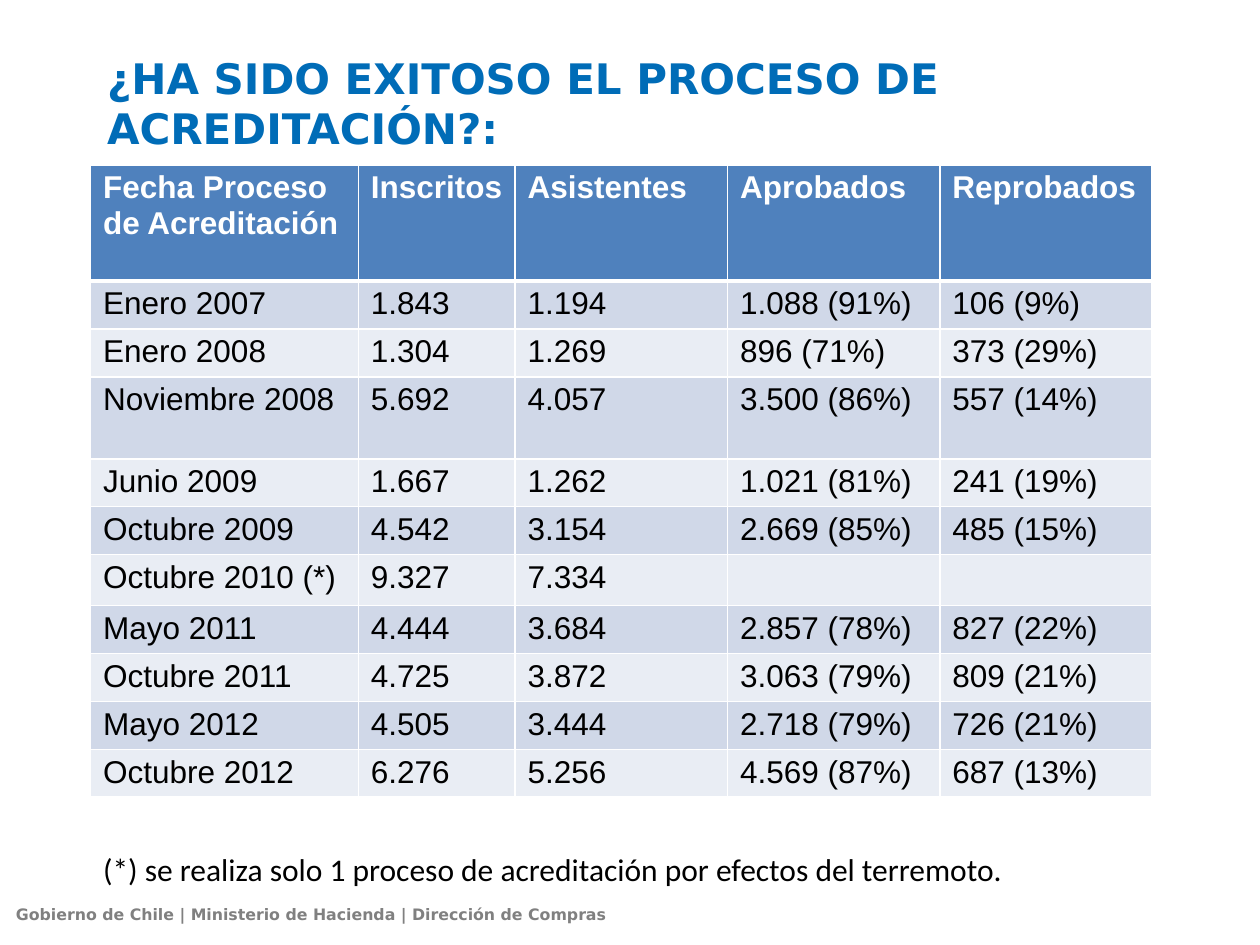
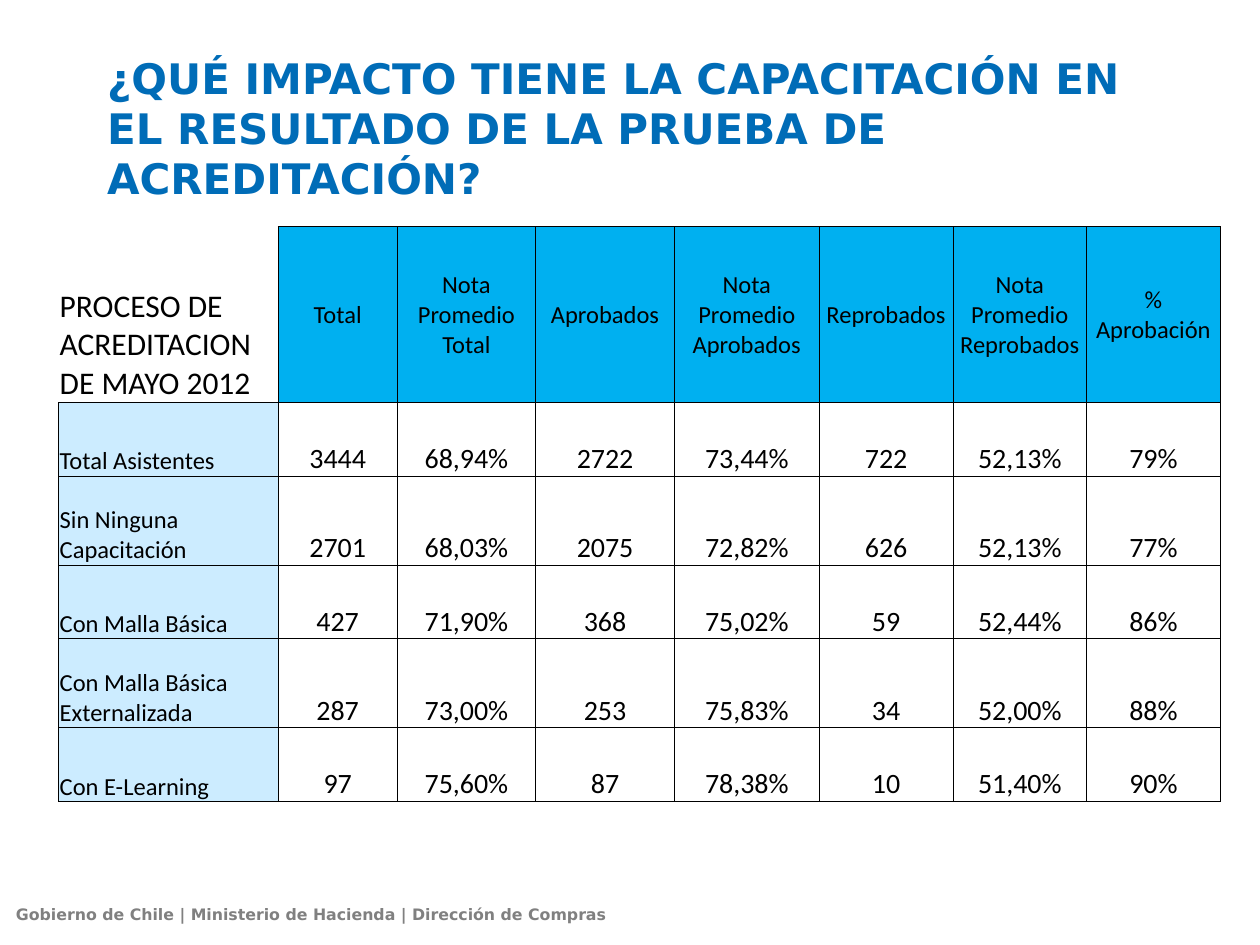
import pptx
import pptx.util
import pptx.dml.color
import pptx.enum.text
import pptx.oxml.ns
import lxml.etree

Pt = pptx.util.Pt
ALIGN = pptx.enum.text.PP_ALIGN
ANCHOR = pptx.enum.text.MSO_ANCHOR

COLORS = {
    "title": "006CB7", "footer": "808080", "text": "000000", "white": "FFFFFF",
    "header": "4F81BD", "band_dark": "D0D8E8", "band_light": "E9EDF4",
    "impact_header": "00B0F0", "impact_label": "CCECFF",
}
HEADING_FONT, TABLE_FONT, BODY_FONT = "DejaVu Sans", "Arial", "Calibri"

# Boxes: left, top, width, height
TITLE_BOX = (54, 26.2, 612, 62.6)
FOOTER_BOX = (2, 513.6, 358, 18)
NOTE_BOX = (51.8, 482.4, 530, 28.8)
RESULTS_BOX = (51.8, 94.4, 606.6, 361)
IMPACT_BOX = (33.4, 129.4, 664, 329)

FOOTER = "Gobierno de Chile | Ministerio de Hacienda | Dirección de Compras"
NOTE = "(*) se realiza solo 1 proceso de acreditación por efectos del terremoto."

RESULTS_WIDTHS = [153, 89.6, 121.4, 121.3, 121.3]
RESULTS_HEIGHTS = [66.2, 27.4, 27.4, 46.8, 27.4, 27.4, 29.1] + [27.4] * 4
RESULTS = [
    ("Fecha Proceso de Acreditación", "Inscritos", "Asistentes", "Aprobados", "Reprobados"),
    ("Enero 2007", "1.843", "1.194", "1.088 (91%)", "106 (9%)"),
    ("Enero 2008", "1.304", "1.269", "896 (71%)", "373 (29%)"),
    ("Noviembre 2008", "5.692", "4.057", "3.500 (86%)", "557 (14%)"),
    ("Junio 2009", "1.667", "1.262", "1.021 (81%)", "241 (19%)"),
    ("Octubre 2009", "4.542", "3.154", "2.669 (85%)", "485 (15%)"),
    ("Octubre 2010 (*)", "9.327", "7.334", "", ""),
    ("Mayo 2011", "4.444", "3.684", "2.857 (78%)", "827 (22%)"),
    ("Octubre 2011", "4.725", "3.872", "3.063 (79%)", "809 (21%)"),
    ("Mayo 2012", "4.505", "3.444", "2.718 (79%)", "726 (21%)"),
    ("Octubre 2012", "6.276", "5.256", "4.569 (87%)", "687 (13%)"),
]

IMPACT_WIDTHS = [125.6, 68, 79.2, 79.2, 82.8, 76.4, 76.4, 76.4]
IMPACT_HEIGHTS = [100.6, 42.1, 50.9, 42.1, 50.9, 42.1]
IMPACT = [
    ("PROCESO DE ACREDITACION DE MAYO 2012", "Total", "Nota Promedio Total", "Aprobados",
     "Nota Promedio Aprobados", "Reprobados", "Nota Promedio Reprobados", "% Aprobación"),
    ("Total Asistentes", "3444", "68,94%", "2722", "73,44%", "722", "52,13%", "79%"),
    ("Sin Ninguna Capacitación", "2701", "68,03%", "2075", "72,82%", "626", "52,13%", "77%"),
    ("Con Malla Básica", "427", "71,90%", "368", "75,02%", "59", "52,44%", "86%"),
    ("Con Malla Básica Externalizada", "287", "73,00%", "253", "75,83%", "34", "52,00%", "88%"),
    ("Con E-Learning", "97", "75,60%", "87", "78,38%", "10", "51,40%", "90%"),
]


def write_text(frame, text, font=BODY_FONT, size=18, color="text", bold=False, align=ALIGN.LEFT):
    para = frame.paragraphs[0]
    para.alignment = align
    span = para.add_run()
    span.text = text
    span.font.name, span.font.size, span.font.bold = font, Pt(size), bold
    span.font.color.rgb = pptx.dml.color.RGBColor.from_string(COLORS[color])


def add_label(page, box, text, **text_format):
    frame = page.shapes.add_textbox(*map(Pt, box)).text_frame
    frame.word_wrap = True
    write_text(frame, text, **text_format)


def add_page(deck, title):
    """Title-only page with the shared heading and footer."""
    page = deck.slides.add_slide(deck.slide_layouts[5])
    heading = page.shapes.title
    heading.left, heading.top, heading.width, heading.height = map(Pt, TITLE_BOX)
    frame = heading.text_frame
    frame.auto_size = pptx.enum.text.MSO_AUTO_SIZE.NONE
    frame.vertical_anchor = ANCHOR.TOP
    write_text(frame, title, font=HEADING_FONT, size=24, color="title", bold=True)
    add_label(page, FOOTER_BOX, FOOTER, font=HEADING_FONT, size=9, color="footer", bold=True)
    return page


def add_grid(page, box, widths, heights):
    table = page.shapes.add_table(len(heights), len(widths), *map(Pt, box)).table
    table.horz_banding = False
    for column, width in zip(table.columns, widths):
        column.width = Pt(width)
    for row, height in zip(table.rows, heights):
        row.height = Pt(height)
    return table


def set_margins(cell, left, top, right, bottom):
    cell.margin_left, cell.margin_top = Pt(left), Pt(top)
    cell.margin_right, cell.margin_bottom = Pt(right), Pt(bottom)


def format_cell(cell, color, fill=None, **edges):
    """Edges L, R, T and B are line widths in points; 0 hides the line."""
    properties = cell._tc.get_or_add_tcPr()
    for side in "LRTB":
        line = lxml.etree.SubElement(properties, pptx.oxml.ns.qn("a:ln" + side))
        width = edges[side]
        line.set("w", str(int(Pt(width))))
        kind = "a:solidFill" if width else "a:noFill"
        paint = lxml.etree.SubElement(line, pptx.oxml.ns.qn(kind))
        if width:
            lxml.etree.SubElement(paint, pptx.oxml.ns.qn("a:srgbClr"), val=COLORS[color])
    if fill:
        cell.fill.solid()
        cell.fill.fore_color.rgb = pptx.dml.color.RGBColor.from_string(COLORS[fill])
    else:
        cell.fill.background()


def add_results_table(page, box):
    table = add_grid(page, box, RESULTS_WIDTHS, RESULTS_HEIGHTS)
    for r, values in enumerate(RESULTS):
        header = r == 0
        fill = "header" if header else "band_dark" if r % 2 else "band_light"
        for c, value in enumerate(values):
            cell = table.cell(r, c)
            format_cell(cell, "white", fill, L=1, R=1, T=3 if r == 1 else 1, B=3 if header else 1)
            # A narrow right margin keeps each heading word on one line
            set_margins(cell, 7.2, 3, 4, 2.4)
            if value:
                write_text(cell.text_frame, value, font=TABLE_FONT, bold=header,
                           color="white" if header else "text")


def add_impact_table(page, box):
    table = add_grid(page, box, IMPACT_WIDTHS, IMPACT_HEIGHTS)
    for r, values in enumerate(IMPACT):
        for c, value in enumerate(values):
            cell = table.cell(r, c)
            header, label = r == 0 and c > 0, c == 0
            corner = r == 0 and label
            outer = 0 if corner else 0.5
            fill = "impact_header" if header else "impact_label" if label and r else None
            format_cell(cell, "text", fill, L=outer, R=0.5, T=outer, B=0.5)
            set_margins(cell, 0.72, 0.72, 0.72, 0)
            cell.vertical_anchor = ANCHOR.MIDDLE if header else ANCHOR.BOTTOM
            write_text(cell.text_frame, value,
                       size=18 if corner else 14 if header or label else 16,
                       align=ALIGN.LEFT if label else ALIGN.CENTER)


def main():
    deck = pptx.Presentation()
    deck.slide_width, deck.slide_height = Pt(720), Pt(540)

    # Results of each accreditation round
    page = add_page(deck, "¿HA SIDO EXITOSO EL PROCESO DE ACREDITACIÓN?:")
    add_results_table(page, RESULTS_BOX)
    add_label(page, NOTE_BOX, NOTE)

    # Effect of training on the test
    page = add_page(deck, "¿QUÉ IMPACTO TIENE LA CAPACITACIÓN EN EL RESULTADO "
                          "DE LA PRUEBA DE ACREDITACIÓN?")
    add_impact_table(page, IMPACT_BOX)

    deck.save("out.pptx")


if __name__ == "__main__":
    main()
